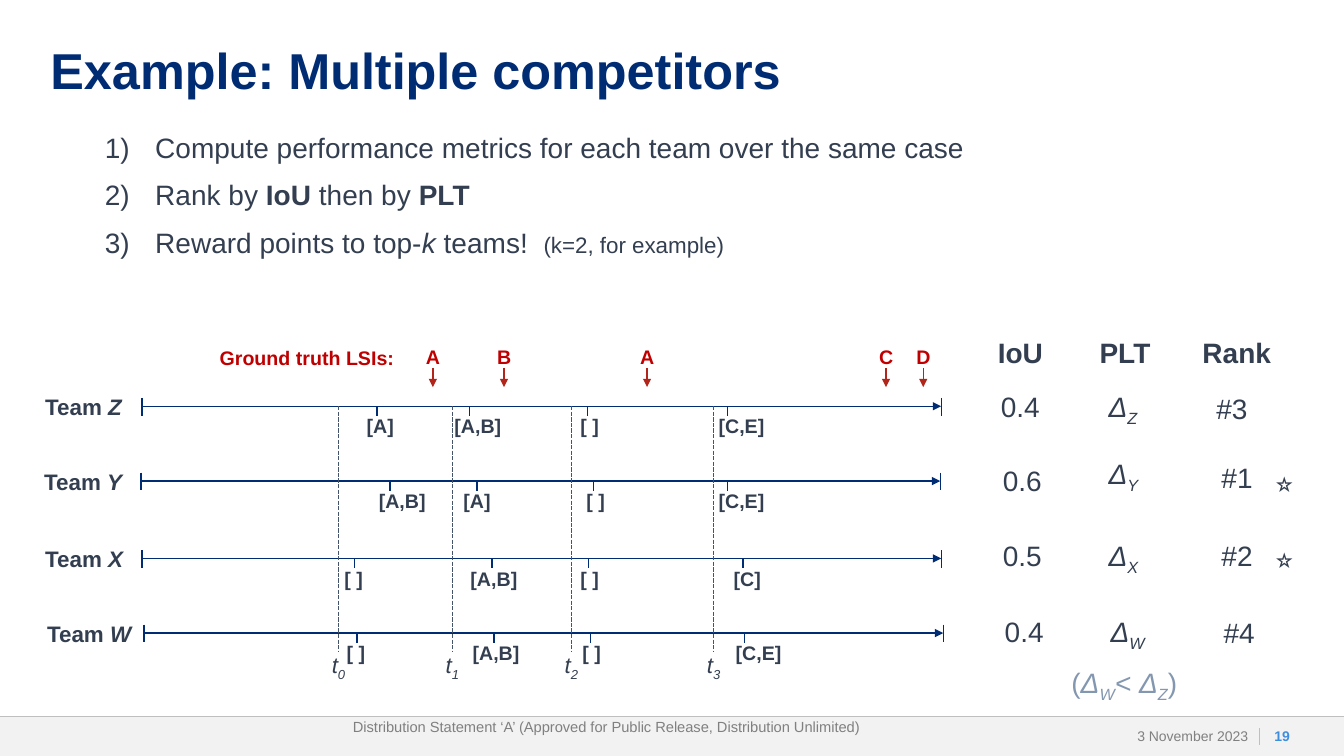
from dataclasses import dataclass

from lxml import etree
from pptx import Presentation
from pptx.dml.color import RGBColor
from pptx.enum.dml import MSO_LINE_DASH_STYLE as Dash
from pptx.enum.shapes import MSO_CONNECTOR, MSO_SHAPE
from pptx.enum.text import MSO_ANCHOR as Anchor, MSO_AUTO_SIZE as AutoSize, PP_ALIGN as Align
from pptx.oxml.ns import qn
from pptx.util import Pt


@dataclass(frozen=True)
class Theme:
    font: str = "Arial"
    navy: str = "002C73"
    ink: str = "333F50"
    red: str = "C00000"
    arrow_red: str = "B1251B"
    slate: str = "44546A"
    pale_slate: str = "8497B0"
    gray: str = "808080"
    rule: str = "BFBFBF"
    band: str = "F2F2F2"
    blue: str = "3E8EDE"
    title: float = 36
    body: float = 20
    label: float = 16
    mark: float = 14
    distribution: float = 10.5
    footer: float = 10


@dataclass(frozen=True)
class Box:
    left: float
    top: float
    width: float
    height: float

    def inner(self, left, top, width, height):
        return Box(self.left + left, self.top + top, width, height)


THEME = Theme()
MARK_WIDTHS = {"[A]": 33.8, "[C]": 33.8, "[A,B]": 48.2, "[C,E]": 47.5, "[ ]": 28}
GROUND_TRUTH = [("A", 285.2), ("B", 336), ("A", 438.2), ("C", 608.9), ("D", 635.5)]
TIME_LINES = [217.9, 299.3, 384.2, 485.8]
# team, name left, name width, axis left, axis top, (tick, label left, label)
TEAMS = [
    ("Z", 1.2, 70, 77.5, 48.2, [(245.3, 230.9, "[A]"), (311.5, 293.5, "[A,B]"),
                                (395.8, 383.5, "[ ]"), (495.8, 482.2, "[C,E]")]),
    ("Y", 0.5, 70.6, 76.8, 101.6, [(254.6, 239.5, "[A,B]"), (316.6, 300, "[A]"),
                                   (400.1, 387.8, "[ ]"), (495.8, 482.2, "[C,E]")]),
    ("X", 1.2, 70.6, 77.5, 156.9, [(229.4, 215, "[ ]"), (327.4, 305, "[A,B]"),
                                   (396.5, 383.5, "[ ]"), (506.6, 493, "[C]")]),
    ("W", 2.6, 75.6, 79, 210.2, [(230.9, 216.5, "[ ]"), (328.8, 306.5, "[A,B]"),
                                 (397.9, 385, "[ ]"), (508, 494.4, "[C,E]")]),
]
HEADINGS = [("IoU", 0.6, 46.8), ("PLT", 73.3, 51.1), ("Rank", 146.8, 64.1)]
# team, then text or width with left and top for IoU, PLT and rank, then star top
RESULTS = [
    ("Z", ("0.4", 2.8, 39), (36, 79.8, 38.3), ("#3", 156.8, 39.8), None),
    ("Y", ("0.6", 4.2, 91.6), (36.7, 79.8, 86.6), ("#1", 160.4, 89.4), 93),
    ("X", ("0.5", 4.2, 144.9), (36.7, 79.8, 144.9), ("#2", 160.4, 144.9), 147),
    ("W", ("0.4", 5.6, 199.6), (41, 81.2, 199.6), ("#4", 161.9, 200.3), None),
]


def rgb(color):
    return RGBColor.from_string(color)


def write(paragraph, text, size=THEME.body, color=THEME.ink, bold=False, italic=False,
          align=Align.LEFT):
    """Text is a string or a list of strings and (string, flags, size) runs;
    flags are b for bold, i for italic and s for subscript."""
    paragraph.alignment = align
    for part in [text] if isinstance(text, str) else text:
        content, flags, run_size = (part, "", size) if isinstance(part, str) else (*part, size)[:3]
        run = paragraph.add_run()
        run.text = content
        font = run.font
        font.name, font.size = THEME.font, Pt(run_size)
        font.bold, font.italic = bold or "b" in flags, italic or "i" in flags
        font.color.rgb = rgb(color)
        if "s" in flags:
            run._r.get_or_add_rPr().set("baseline", "-25000")


def set_insets(frame, side=0):
    frame.margin_left = frame.margin_right = Pt(side)
    frame.margin_top = frame.margin_bottom = 0


def place(shape, box):
    shape.left, shape.top = Pt(box.left), Pt(box.top)
    shape.width, shape.height = Pt(box.width), Pt(box.height)


def add_text(slide, box, text, wrap=False, **text_format):
    shape = slide.shapes.add_textbox(Pt(box.left), Pt(box.top), Pt(box.width), Pt(box.height))
    frame = shape.text_frame
    frame.word_wrap = wrap
    write(frame.paragraphs[0], text, **text_format)
    return frame


def add_line(slide, box, start, end, color, width=1, arrow=False, dash=None):
    """Start and end are measured from the corner of the box."""
    line = slide.shapes.add_connector(
        MSO_CONNECTOR.STRAIGHT, Pt(box.left + start[0]), Pt(box.top + start[1]),
        Pt(box.left + end[0]), Pt(box.top + end[1]))
    line.line.color.rgb = rgb(color)
    line.line.width = Pt(width)
    if dash:
        line.line.dash_style = dash
    if arrow:
        etree.SubElement(line.line._get_or_add_ln(), qn("a:tailEnd"), type="triangle")
    etree.SubElement(line._element.spPr, qn("a:effectLst"))


def add_title(slide, box, text):
    title = slide.shapes.title
    place(title, box)
    frame = title.text_frame
    set_insets(frame)
    frame.auto_size = AutoSize.NONE
    frame.vertical_anchor = Anchor.TOP
    frame.paragraphs[0].line_spacing = 0.9
    write(frame.paragraphs[0], text, size=THEME.title, color=THEME.navy, bold=True)


def add_steps(slide, box, steps):
    frame = add_text(slide, box, steps[0], wrap=True)
    set_insets(frame)
    for step in steps[1:]:
        paragraph = frame.add_paragraph()
        paragraph.space_before = Pt(10)
        write(paragraph, step)
    for paragraph in frame.paragraphs:
        properties = paragraph._p.get_or_add_pPr()
        properties.set("marL", str(Pt(36)))
        properties.set("indent", str(-Pt(36)))
        etree.SubElement(properties, qn("a:buAutoNum"), type="arabicParenR")


def add_team_timeline(slide, box, team):
    name, name_left, name_width, left, top, marks = team
    right = left + 570.8
    add_line(slide, box, (left, top), (right, top), THEME.navy, arrow=True)
    for end in (left, right):
        add_line(slide, box, (end, top - 6), (end, top + 6.7), THEME.navy)
    add_text(slide, box.inner(name_left, top - 13, name_width, 26.6), ["Team ", (name, "i")],
             size=THEME.label, bold=True)
    for tick, label_left, label in marks:
        add_line(slide, box, (tick, top), (tick, top + 7), THEME.navy)
        add_text(slide, box.inner(label_left, top + 2.2, MARK_WIDTHS[label], 24.5), label,
                 size=THEME.mark, bold=True)


def add_timelines(slide, box):
    truth_format = dict(size=THEME.mark, color=THEME.red, bold=True)
    add_text(slide, box.inner(125.8, 1.4, 139.7, 24.5), "Ground truth LSIs:", **truth_format)
    for letter, x in GROUND_TRUTH:
        add_text(slide, box.inner(x - 12, 0.6, 24.5, 24.5), letter, **truth_format)
        add_line(slide, box, (x, 20.8), (x, 34.5), THEME.arrow_red, arrow=True)
    for team in TEAMS:
        add_team_timeline(slide, box, team)
    for index, x in enumerate(TIME_LINES):
        add_line(slide, box, (x, 48.2), (x, 223.8), THEME.slate, dash=Dash.SQUARE_DOT)
        add_text(slide, box.inner(x - 12, 219.9, 25.2, 26.6), ["t", (str(index), "s")],
                 size=THEME.label, italic=True)


def add_results(slide, box):
    height = 31.5
    for heading, left, width in HEADINGS:
        add_text(slide, box.inner(left, 0.2, width, height), heading, bold=True)
    for team, iou, plt, rank, star_top in RESULTS:
        for (value, left, top), width in ((iou, 42.5), (rank, 36.7)):
            add_text(slide, box.inner(left, top, width, height), value)
        width, left, top = plt
        add_text(slide, box.inner(left, top, width, height), ["Δ", (team, "s")], italic=True)
        if star_top:
            add_text(slide, box.inner(198.6, star_top, 34.6, height), "⭐️")
    add_text(slide, box.inner(53.2, 235.6, 92.2, height),
             ["(", ("Δ", "i"), ("W", "is"), ("< Δ", "i"), ("Z", "is"), ")"],
             color=THEME.pale_slate)


def add_footer(slide, box):
    band = slide.shapes.add_shape(MSO_SHAPE.RECTANGLE, 0, 0, 0, 0)
    place(band, box)
    band.shadow.inherit = False
    band.fill.solid()
    band.fill.fore_color.rgb = rgb(THEME.band)
    band.line.fill.background()
    add_line(slide, box, (0, 0), (box.width, 0), THEME.rule, width=0.5)
    add_line(slide, box, (899.3, 8), (899.3, 20.2), THEME.rule, width=0.5)
    date = add_text(slide, box.inner(790.6, 0, 108, box.height), "3 November 2023", wrap=True,
                    size=THEME.footer, color=THEME.gray, align=Align.RIGHT)
    number = add_text(slide, box.inner(900.7, 0, 30.2, box.height), "19", wrap=True,
                      size=THEME.footer, color=THEME.blue, bold=True, align=Align.CENTER)
    for frame, side in ((date, 7.2), (number, 0)):
        set_insets(frame, side)
        frame.vertical_anchor = Anchor.MIDDLE
    add_text(slide, box.inner(49.7, -2.9, 767.5, 20.2),
             "Distribution Statement ‘A’ (Approved for Public Release, Distribution Unlimited)",
             wrap=True, size=THEME.distribution, color=THEME.gray, align=Align.CENTER)


def main():
    presentation = Presentation()
    presentation.slide_width, presentation.slide_height = Pt(960), Pt(540)
    slide = presentation.slides.add_slide(presentation.slide_layouts[5])
    add_footer(slide, Box(0, 511.9, 960, 28.1))
    add_title(slide, Box(36, 33.1, 888, 59.8), "Example: Multiple competitors")
    add_steps(slide, Box(74.9, 92.9, 810, 396), [
        "Compute performance metrics for each team over the same case",
        ["Rank by ", ("IoU", "b"), " then by ", ("PLT", "b")],
        ["Reward points to top-", ("k", "i"), " teams!  ",
         ("(k=2, for example)", "", THEME.label)],
    ])
    add_results(slide, Box(705, 236, 235, 268))
    add_timelines(slide, Box(24, 242, 655, 247))
    presentation.save("out.pptx")


if __name__ == "__main__":
    main()
